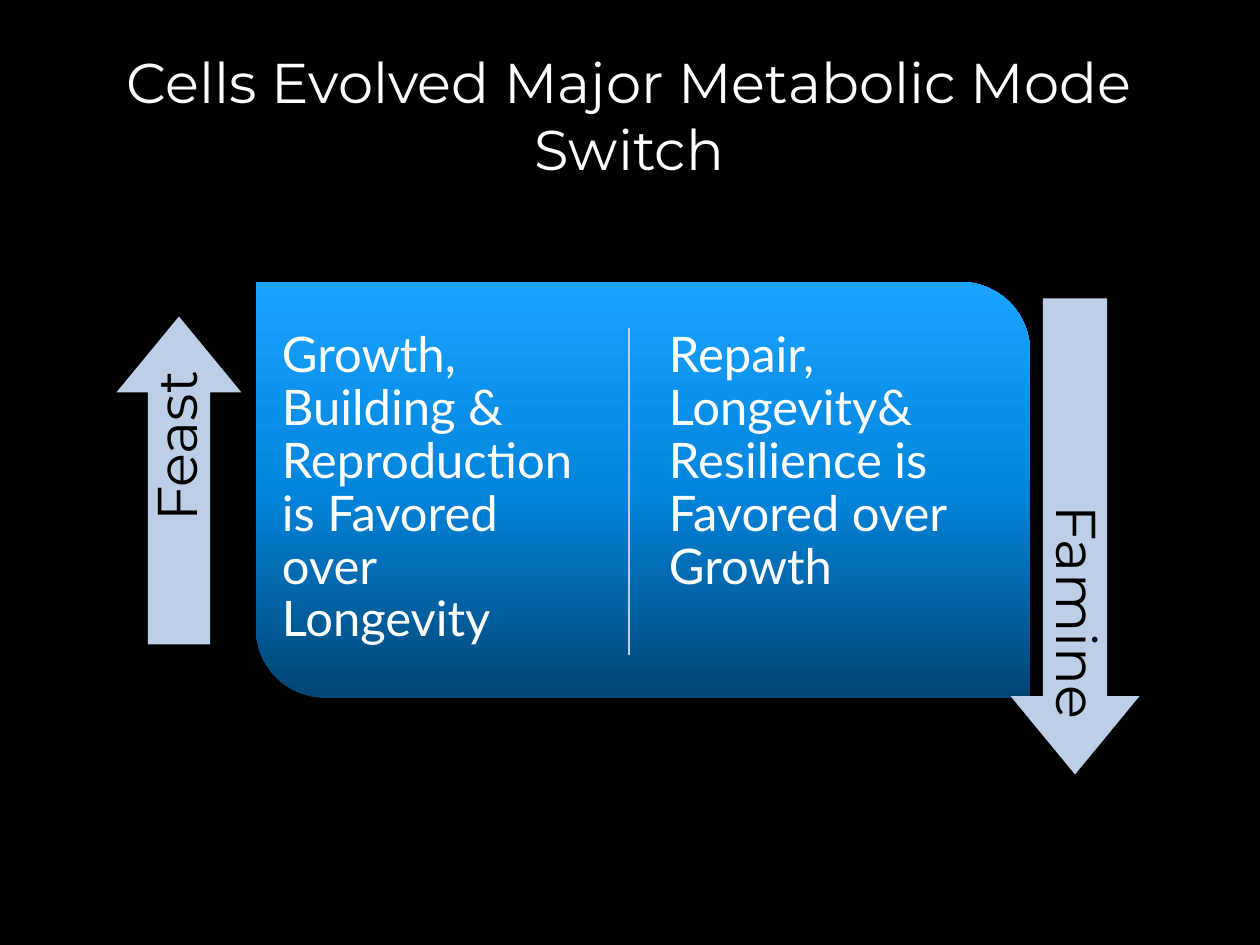
"""Build the slide on the feast and famine modes of cell metabolism."""
import copy
from dataclasses import dataclass
from typing import NamedTuple

import lxml.etree
import pptx
import pptx.dml.color
import pptx.enum.shapes
import pptx.enum.text
import pptx.oxml
import pptx.oxml.ns
import pptx.util

EMU_PER_PX = 914400 / 126
ALIGN = pptx.enum.text.PP_ALIGN
ANCHOR = pptx.enum.text.MSO_ANCHOR
SHAPE = pptx.enum.shapes.MSO_SHAPE


class Box(NamedTuple):
    left: int
    top: int
    width: int
    height: int


@dataclass(frozen=True)
class Theme:
    background: str = "000000"
    light_text: str = "FFFFFF"
    dark_text: str = "000000"
    accent: str = "BDCEE8"
    shadow: str = "000000"
    gradient: tuple[str, ...] = ("014573", "0285DD", "1AA3FF")
    heading_font: str = "Montserrat"
    body_font: str = "Lato"
    heading_size: int = 32
    body_size: int = 28
    divider_width: float = 1.5


THEME = Theme()


@dataclass(frozen=True)
class TextStyle:
    font: str
    size: int
    color: str
    align: ALIGN
    anchor: ANCHOR
    paragraph: dict[str, object]
    inset: int | None = None


@dataclass(frozen=True)
class Mode:
    label: str
    outcome: str
    arrow: Box
    label_box: Box
    outcome_box: Box
    rotation: int


TIGHT = {"line_spacing": 0.9, "space_after": pptx.util.Pt(11)}
TITLE = TextStyle(THEME.heading_font, THEME.heading_size, THEME.light_text,
                  ALIGN.CENTER, ANCHOR.MIDDLE, {})
OUTCOME = TextStyle(THEME.body_font, THEME.body_size, THEME.light_text,
                    ALIGN.LEFT, ANCHOR.TOP, TIGHT, 15)
LABEL = TextStyle(THEME.heading_font, THEME.heading_size, THEME.dark_text,
                  ALIGN.RIGHT, ANCHOR.MIDDLE, TIGHT, 16)

TITLE_BOX = Box(94, 16, 1071, 197)
PANEL = Box(256, 282, 774, 416)
DIVIDER = Box(629, 328, 0, 327)
MODES = (
    Mode("Feast", "Growth, Building & Reproduction is Favored over Longevity",
         Box(15, 418, 328, 125), Box(34, 469, 290, 62),
         Box(267, 315, 335, 353), 270),
    Mode("Famine", "Repair, Longevity& Resilience is Favored over Growth",
         Box(837, 472, 476, 129), Box(856, 485, 437, 64),
         Box(654, 315, 335, 353), 90),
)


def px(length: int) -> int:
    """Convert pixels to EMU."""
    return round(length * EMU_PER_PX)


def rgb(color: str) -> pptx.dml.color.RGBColor:
    """Convert a hex string to a colour."""
    return pptx.dml.color.RGBColor.from_string(color)


def set_all(target: object, values: dict[str, object]) -> None:
    """Set each named attribute on the target."""
    for name, value in values.items():
        setattr(target, name, value)


def add_text(slide, box: Box, text: str, style: TextStyle, rotation: int = 0) -> None:
    """Add a wrapped text box in the given style."""
    shape = slide.shapes.add_textbox(*map(px, box))
    shape.rotation = rotation
    frame = shape.text_frame
    set_all(frame, {"word_wrap": True, "vertical_anchor": style.anchor})
    if style.inset is not None:
        sides = ("left", "top", "right", "bottom")
        set_all(frame, {f"margin_{side}": px(style.inset) for side in sides})
    paragraph = frame.paragraphs[0]
    set_all(paragraph, {"alignment": style.align, **style.paragraph})
    run = paragraph.add_run()
    run.text = text
    set_all(run.font, {"name": style.font, "size": pptx.util.Pt(style.size)})
    run.font.color.rgb = rgb(style.color)


def add_shadowed_shape(slide, kind: SHAPE, box: Box, adjustments: tuple[float, ...]):
    """Add an unlined preset shape with a soft drop shadow."""
    shape = slide.shapes.add_shape(kind, *map(px, box))
    for index, value in enumerate(adjustments):
        shape.adjustments[index] = value
    shape.line.fill.background()
    shape.shadow.inherit = False
    effects = shape._element.spPr.find(pptx.oxml.ns.qn("a:effectLst"))
    effects.append(pptx.oxml.parse_xml(
        f'<a:outerShdw {pptx.oxml.ns.nsdecls("a")} blurRad="{pptx.util.Pt(7)}" '
        f'dist="{pptx.util.Pt(4)}" dir="{35 * 60000}"><a:srgbClr val="{THEME.shadow}">'
        '<a:alpha val="55000"/></a:srgbClr></a:outerShdw>'))
    return shape


def add_panel(slide) -> None:
    """Add the gradient panel that holds both outcomes."""
    panel = add_shadowed_shape(slide, SHAPE.ROUND_2_DIAG_RECTANGLE, PANEL, (0, 0.167))
    panel.fill.gradient()
    panel.fill.gradient_angle = 90
    stop_list = panel._element.spPr.find(".//" + pptx.oxml.ns.qn("a:gsLst"))
    stop_list.append(copy.deepcopy(stop_list[-1]))
    for index, color in enumerate(THEME.gradient):
        stop = panel.fill.gradient_stops[index]
        stop.color.rgb = rgb(color)
        stop.position = index / (len(THEME.gradient) - 1)


def add_divider(slide) -> None:
    """Add the line between the outcomes."""
    left, top, width, height = DIVIDER
    line = slide.shapes.add_connector(
        pptx.enum.shapes.MSO_CONNECTOR.STRAIGHT,
        px(left), px(top), px(left + width), px(top + height))
    line.line.color.rgb = rgb(THEME.accent)
    line.line.width = pptx.util.Pt(THEME.divider_width)
    lxml.etree.SubElement(line._element.spPr, pptx.oxml.ns.qn("a:effectLst"))


def add_mode_arrow(slide, mode: Mode) -> None:
    """Add a rotated arrow with its label."""
    arrow = add_shadowed_shape(slide, SHAPE.RIGHT_ARROW, mode.arrow, (0.498, 0.607))
    arrow.rotation = mode.rotation
    arrow.fill.solid()
    arrow.fill.fore_color.rgb = rgb(THEME.accent)
    add_text(slide, mode.label_box, mode.label, LABEL, mode.rotation)


def main() -> None:
    """Build and save the presentation."""
    presentation = pptx.Presentation()
    set_all(presentation, {"slide_width": px(1260), "slide_height": px(945)})
    slide = presentation.slides.add_slide(presentation.slide_layouts[6])
    slide.background.fill.solid()
    slide.background.fill.fore_color.rgb = rgb(THEME.background)
    add_text(slide, TITLE_BOX, "Cells Evolved Major Metabolic Mode Switch", TITLE)
    add_panel(slide)
    add_divider(slide)
    for mode in MODES:
        add_text(slide, mode.outcome_box, mode.outcome, OUTCOME)
    for mode in MODES:
        add_mode_arrow(slide, mode)
    presentation.save("out.pptx")


if __name__ == "__main__":
    main()
